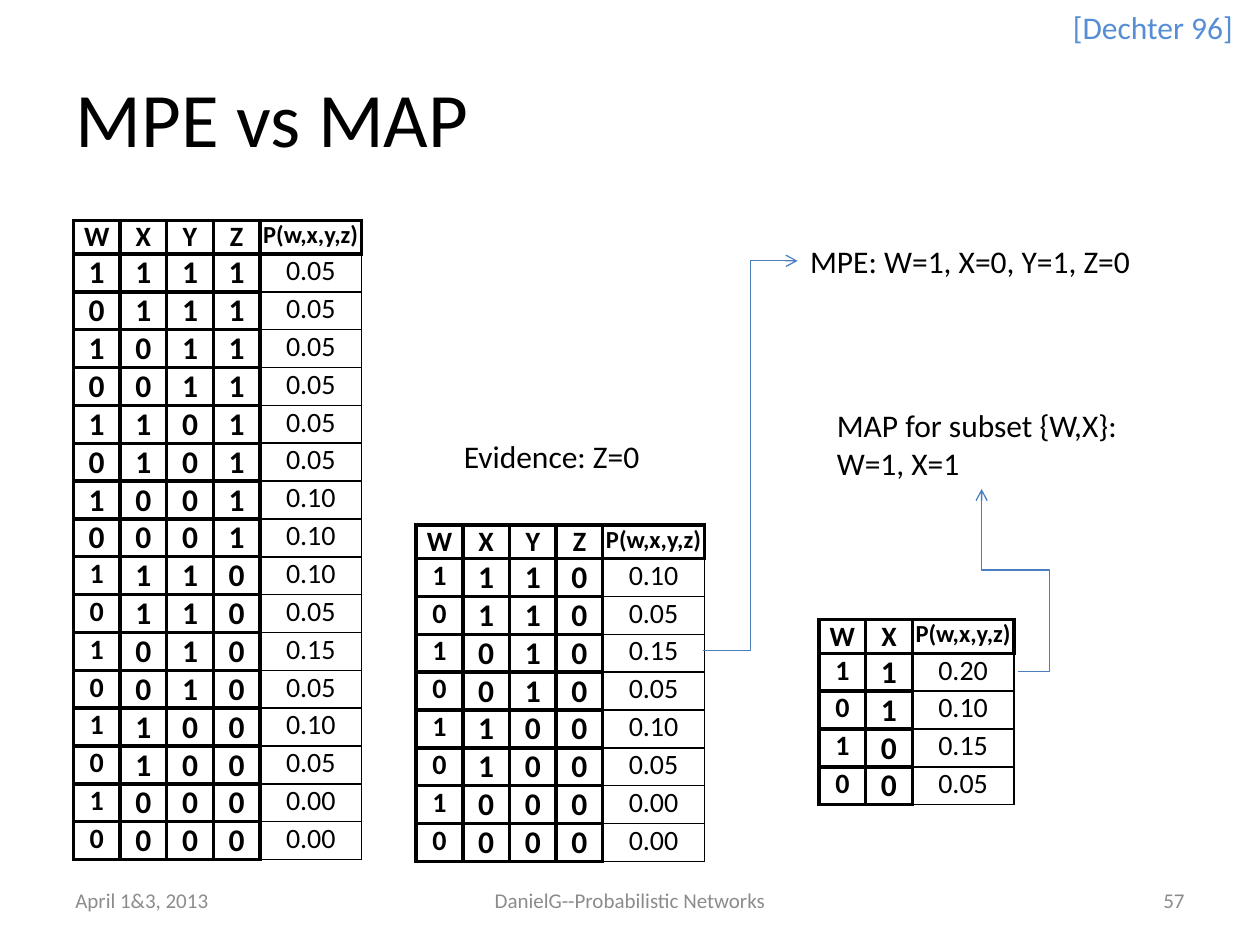
from itertools import product

from lxml.etree import SubElement
from pptx import Presentation
from pptx.dml.color import RGBColor
from pptx.enum.shapes import MSO_CONNECTOR
from pptx.enum.text import MSO_ANCHOR, PP_ALIGN
from pptx.oxml.ns import qn
from pptx.util import Cm, Pt

BLACK = RGBColor(0x00, 0x00, 0x00)
GRAY = RGBColor(0x8C, 0x8C, 0x8C)
BLUE = RGBColor(0x55, 0x8E, 0xD5)
LINE_BLUE = RGBColor(0x4B, 0x7E, 0xBC)

FONT = "Calibri"
THICK, THIN = 2.25, 1
VARIABLE_WIDTH, PROBABILITY_WIDTH = 0.94, 2.05
HEADER_HEIGHT, ROW_HEIGHT = 0.68, 0.76

JOINT = ["0.05"] * 6 + ["0.10"] * 3 + ["0.05", "0.15", "0.05", "0.10", "0.05", "0.00", "0.00"]
EVIDENCE = JOINT[8:]
MARGINAL = ["0.20", "0.10", "0.15", "0.05"]


def format_paragraph(paragraph, size, color=BLACK, bold=False, align=PP_ALIGN.LEFT):
    """Apply alignment and font values to a paragraph."""
    paragraph.alignment = align
    values = {"name": FONT, "size": Pt(size), "bold": bold}
    for name, value in values.items():
        setattr(paragraph.font, name, value)
    paragraph.font.color.rgb = color


def add_label(slide, box, text, size=18, color=BLACK, align=PP_ALIGN.LEFT,
              anchor=MSO_ANCHOR.TOP, wrap=True):
    """Add a text box at box, given as left, top, width, height in cm."""
    frame = slide.shapes.add_textbox(*map(Cm, box)).text_frame
    frame.word_wrap = wrap
    frame.vertical_anchor = anchor
    frame.text = text
    format_paragraph(frame.paragraphs[0], size, color, align=align)


def add_title(slide, box, text):
    """Place and format the title placeholder."""
    title = slide.shapes.title
    for name, value in zip(("left", "top", "width", "height"), box):
        setattr(title, name, Cm(value))
    title.text_frame.text = text
    title.text_frame.vertical_anchor = MSO_ANCHOR.MIDDLE
    format_paragraph(title.text_frame.paragraphs[0], 44)


def set_borders(cell, left, right, top, bottom):
    """Draw black borders with the given widths in points."""
    properties = cell._tc.get_or_add_tcPr()
    for tag, width in zip(("a:lnL", "a:lnR", "a:lnT", "a:lnB"), (left, right, top, bottom)):
        line = SubElement(properties, qn(tag), w=str(Pt(width)))
        fill = SubElement(line, qn("a:solidFill"))
        SubElement(fill, qn("a:srgbClr"), val=str(BLACK))


def fill_cell(cell, text, size, bold, borders):
    """Write one centred cell without margins or fill."""
    for side in ("left", "right", "top", "bottom"):
        setattr(cell, f"margin_{side}", 0)
    set_borders(cell, *borders)
    cell.fill.background()
    cell.text = text
    format_paragraph(cell.text_frame.paragraphs[0], size, bold=bold, align=PP_ALIGN.CENTER)


def add_probability_table(slide, left, top, variables, assignments, probabilities, large_rows=0):
    """Add a table of assignments; the first large_rows have a large first column."""
    count = len(variables)
    rows = [[*variables, "P(w,x,y,z)"]]
    rows += [[*states, value] for states, value in zip(assignments, probabilities)]
    width = count * VARIABLE_WIDTH + PROBABILITY_WIDTH
    height = HEADER_HEIGHT + len(probabilities) * ROW_HEIGHT
    table = slide.shapes.add_table(len(rows), count + 1, Cm(left), Cm(top),
                                   Cm(width), Cm(height)).table
    table.first_row = table.horz_banding = False
    for index, column in enumerate(table.columns):
        column.width = Cm(VARIABLE_WIDTH if index < count else PROBABILITY_WIDTH)
    for r, texts in enumerate(rows):
        table.rows[r].height = Cm(ROW_HEIGHT if r else HEADER_HEIGHT)
        for c, text in enumerate(texts):
            is_probability = c == count
            borders = (THICK,) * 4
            if r == 0:
                size = 14 if is_probability else 16
            elif is_probability:
                size = 16
                borders = (THICK, THIN, THICK if r == 1 else THIN, THIN)
            else:
                size = 16 if c == 0 and r > large_rows else 18
            fill_cell(table.cell(r, c), text, size, r == 0 or not is_probability, borders)


def add_elbow_arrow(slide, start, end, preset, adjustments):
    """Add a bent arrow between two points in cm."""
    connector = slide.shapes.add_connector(MSO_CONNECTOR.ELBOW, *map(Cm, start + end))
    connector.line.color.rgb = LINE_BLUE
    connector.line.width = Pt(0.75)
    properties = connector._element.spPr
    geometry = properties.find(qn("a:prstGeom"))
    geometry.set("prst", preset)
    guides = geometry.get_or_add_avLst()
    for number, value in enumerate(adjustments, 1):
        name = f"adj{number}"
        SubElement(guides, qn("a:gd"), name=name, fmla=f"val {value}")
    SubElement(properties.find(qn("a:ln")), qn("a:tailEnd"), type="arrow")
    SubElement(properties, qn("a:effectLst"))


def add_footer(slide, top, height):
    """Add the date, the footer text and the slide number."""
    parts = [
        (1.27, 5.93, "April 1&3, 2013", PP_ALIGN.LEFT),
        (8.68, 8.04, "DanielG--Probabilistic Networks", PP_ALIGN.CENTER),
        (18.2, 5.93, "57", PP_ALIGN.RIGHT),
    ]
    for left, width, text, align in parts:
        add_label(slide, (left, top, width, height), text, 12, GRAY, align, MSO_ANCHOR.MIDDLE)


def build_slide(presentation):
    """Build the slide that compares MPE with MAP."""
    slide = presentation.slides.add_slide(presentation.slide_layouts[5])
    joint_states = [states[::-1] for states in product("10", repeat=4)]
    subset_states = [states[::-1] for states in product("10", repeat=2)]

    add_title(slide, (1.27, 0.76, 22.86, 3.18), "MPE vs MAP")
    add_footer(slide, 17.65, 1.01)
    add_probability_table(slide, 1.48, 4.44, "WXYZ", joint_states, JOINT, large_rows=8)
    add_label(slide, (9.1, 8.68, 4.23, 1.03), "Evidence: Z=0")
    add_probability_table(slide, 8.39, 10.58, "WXYZ", joint_states[8:], EVIDENCE)
    add_elbow_arrow(slide, (14.18, 13.12), (16.08, 5.26), "bentConnector3", [50000])
    add_label(slide, (16.08, 4.76, 7.41, 1.03), "MPE: W=1, X=0, Y=1, Z=0")
    add_probability_table(slide, 16.51, 12.49, "WX", subset_states, MARGINAL)
    add_elbow_arrow(slide, (20.53, 13.54), (19.79, 9.86), "bentConnector4", [-85700, 55700])
    add_label(slide, (16.62, 8.06, 6.35, 1.8), "MAP for subset {W,X}: W=1, X=1")
    add_label(slide, (21.38, 0.03, 3.92, 1.03), "[Dechter 96]", color=BLUE, wrap=False)


def main():
    """Create and save the presentation."""
    presentation = Presentation()
    presentation.slide_width = Cm(25.4)
    presentation.slide_height = Cm(19.05)
    build_slide(presentation)
    presentation.save("out.pptx")


if __name__ == "__main__":
    main()
